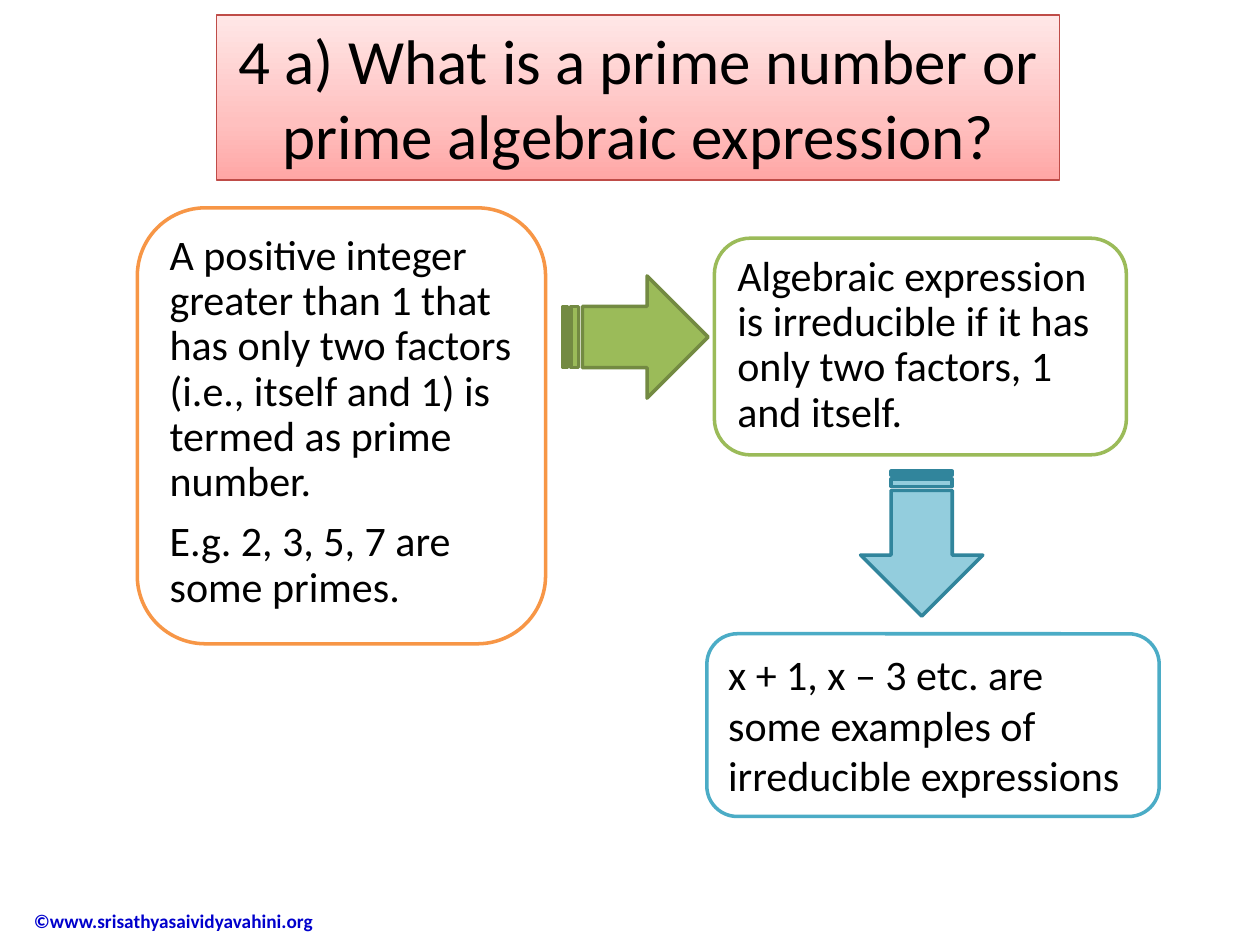
from copy import deepcopy
from dataclasses import dataclass

from pptx import Presentation
from pptx.dml.color import RGBColor as Rgb
from pptx.enum.shapes import MSO_SHAPE as Kind
from pptx.enum.text import MSO_ANCHOR as Anchor, MSO_AUTO_SIZE as Fit, PP_ALIGN as Align
from pptx.util import Inches, Pt

HUES = {
    "white": "FFFFFF", "black": "000000", "blue": "0000CC",
    "red": "BF4C48", "rose": "FFA6A5", "pink": "FFC0BF", "blush": "FFE7E7",
    "orange": "F79646", "green": "9BBB59", "olive": "738A42",
    "teal": "4BACC6", "sky": "93CDDD", "sea": "31859C",
}


@dataclass
class Card:
    """A framed shape with its text and paragraph format."""
    kind: Kind
    at: tuple
    edge: str
    lines: list
    fill: str = "white"
    width: float = 2
    size: int = 24
    align: Align = Align.LEFT
    pitch: float = 1.0
    after: float = 0


@dataclass
class Arrow:
    """A striped arrow and its turn in degrees."""
    at: tuple
    fill: str
    edge: str
    turn: int = 0


TIGHT = {"pitch": 0.9, "after": 8.4}
CARDS = [
    Card(Kind.RECTANGLE, (1.72, 0.12, 6.69, 1.31), "red",
         ["4 a) What is a prime number or prime algebraic expression?"],
         width=0.75, size=36, align=Align.CENTER),
    Card(Kind.FLOWCHART_ALTERNATE_PROCESS, (1.09, 1.65, 3.24, 3.46), "orange",
         ["A positive integer greater than 1 that has only two factors "
          "(i.e., itself and 1) is termed as prime number.",
          "E.g. 2, 3, 5, 7 are some primes."], **TIGHT),
    Card(Kind.ROUNDED_RECTANGLE, (5.67, 1.89, 3.27, 1.72), "green",
         ["Algebraic expression is irreducible if it has only two factors, "
          "1 and itself."], **TIGHT),
    Card(Kind.ROUNDED_RECTANGLE, (5.61, 5.03, 3.59, 1.45), "teal",
         ["x + 1, x – 3 etc. are some examples of irreducible expressions"]),
]
ARROWS = [
    Arrow((4.47, 2.19, 1.15, 0.97), "green", "olive"),
    Arrow((6.74, 3.83, 1.15, 0.97), "sky", "sea", 90),
]


def hue(name: str) -> Rgb:
    """Look up a colour by name."""
    return Rgb.from_string(HUES[name])


def write(shape, lines: list, *, size: int, color: str = "black", bold: bool = False,
          align: Align = Align.LEFT, pitch: float = 1.0, after: float = 0,
          anchor: Anchor = Anchor.TOP, fit: Fit = Fit.NONE, indent: float = 0) -> None:
    """Fill a shape with formatted paragraphs."""
    frame = shape.text_frame
    frame.word_wrap = True
    frame.auto_size = fit
    frame.vertical_anchor = anchor
    frame.text = "\n".join(lines)
    for para in frame.paragraphs:
        para.alignment = align
        para.line_spacing = pitch
        para.space_after = Pt(after)
        if indent:
            para._p.get_or_add_pPr().set("marL", str(Inches(indent)))
        for run in para.runs:
            font = run.font
            font.name, font.size, font.bold = "Calibri", Pt(size), bold
            font.color.rgb = hue(color)


def draw(slide, kind: Kind, at: tuple, fill: str, edge: str, width: float = 2):
    """Add a preset shape with a solid fill and an outline."""
    shape = slide.shapes.add_shape(kind, *map(Inches, at))
    shape.shadow.inherit = False
    shape.fill.solid()
    shape.fill.fore_color.rgb = hue(fill)
    shape.line.color.rgb = hue(edge)
    shape.line.width = Pt(width)
    return shape


def shade(shape, stops: list, angle: int) -> None:
    """Give a shape a linear gradient of three stops."""
    shape.fill.gradient()
    shape.fill.gradient_angle = angle
    first = shape.fill._fill._gradFill.gsLst[0]
    first.addnext(deepcopy(first))
    for stop, (place, name) in zip(shape.fill.gradient_stops, stops):
        stop.position = place
        stop.color.rgb = hue(name)


def place(slide, card: Card):
    """Draw one card with its text."""
    shape = draw(slide, card.kind, card.at, card.fill, card.edge, card.width)
    write(shape, card.lines, size=card.size, align=card.align, pitch=card.pitch,
          after=card.after, fit=Fit.SHAPE_TO_FIT_TEXT)
    return shape


def main() -> None:
    """Build the slide and save it."""
    deck = Presentation()
    deck.slide_width, deck.slide_height = Inches(10), Inches(7.5)
    slide = deck.slides.add_slide(deck.slide_layouts[6])
    credit = slide.shapes.add_textbox(*map(Inches, (-0.33, 7.1, 3.02, 0.41)))
    write(credit, ["©www.srisathyasaividyavahini.org"], size=11, color="blue",
          bold=True, anchor=Anchor.MIDDLE, indent=0.5)
    title, *_ = [place(slide, card) for card in CARDS]
    shade(title, [(0, "rose"), (0.35, "pink"), (1, "blush")], 90)
    for arrow in ARROWS:
        shape = draw(slide, Kind.STRIPED_RIGHT_ARROW, arrow.at, arrow.fill, arrow.edge)
        shape.rotation = arrow.turn
    deck.save("out.pptx")


if __name__ == "__main__":
    main()
